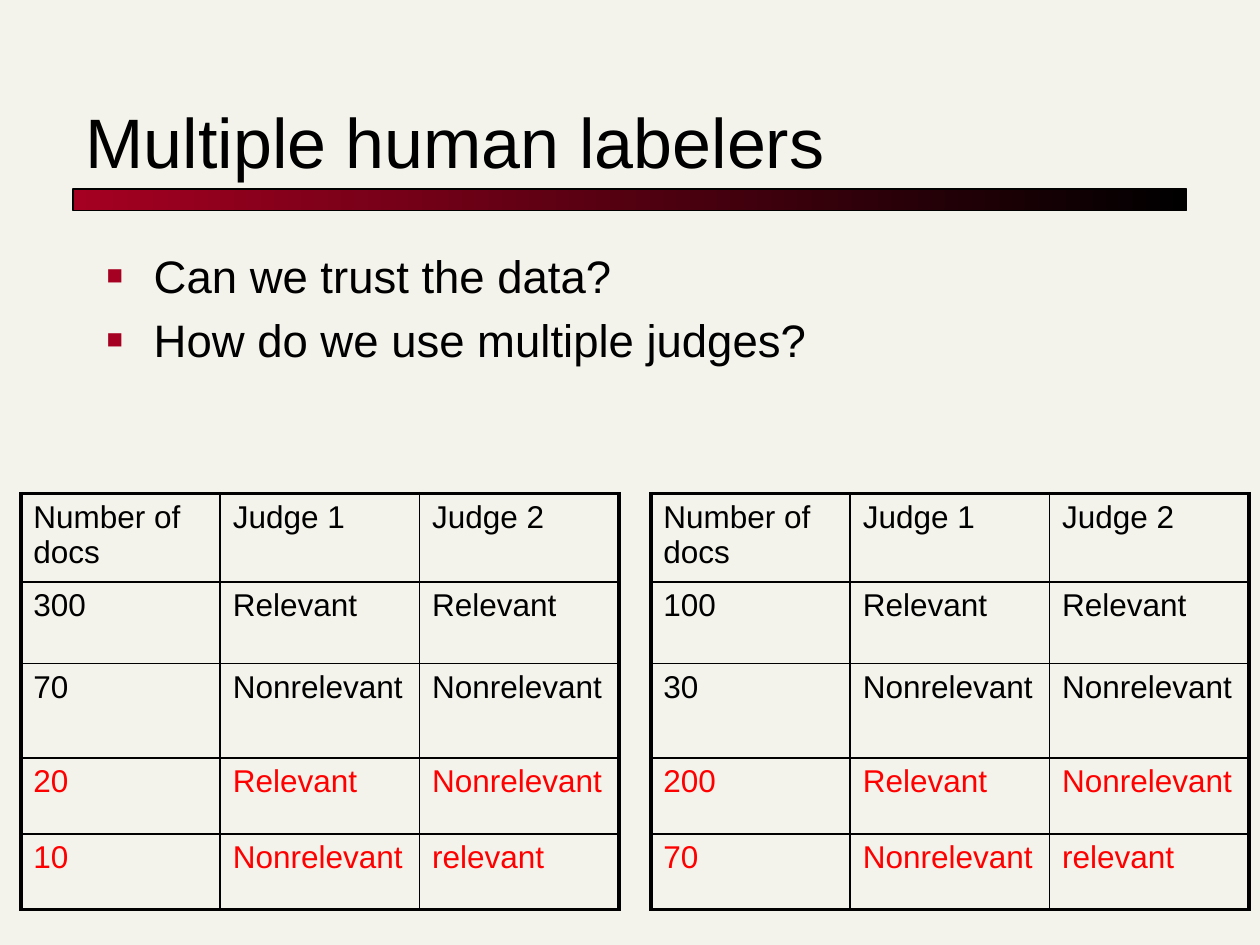
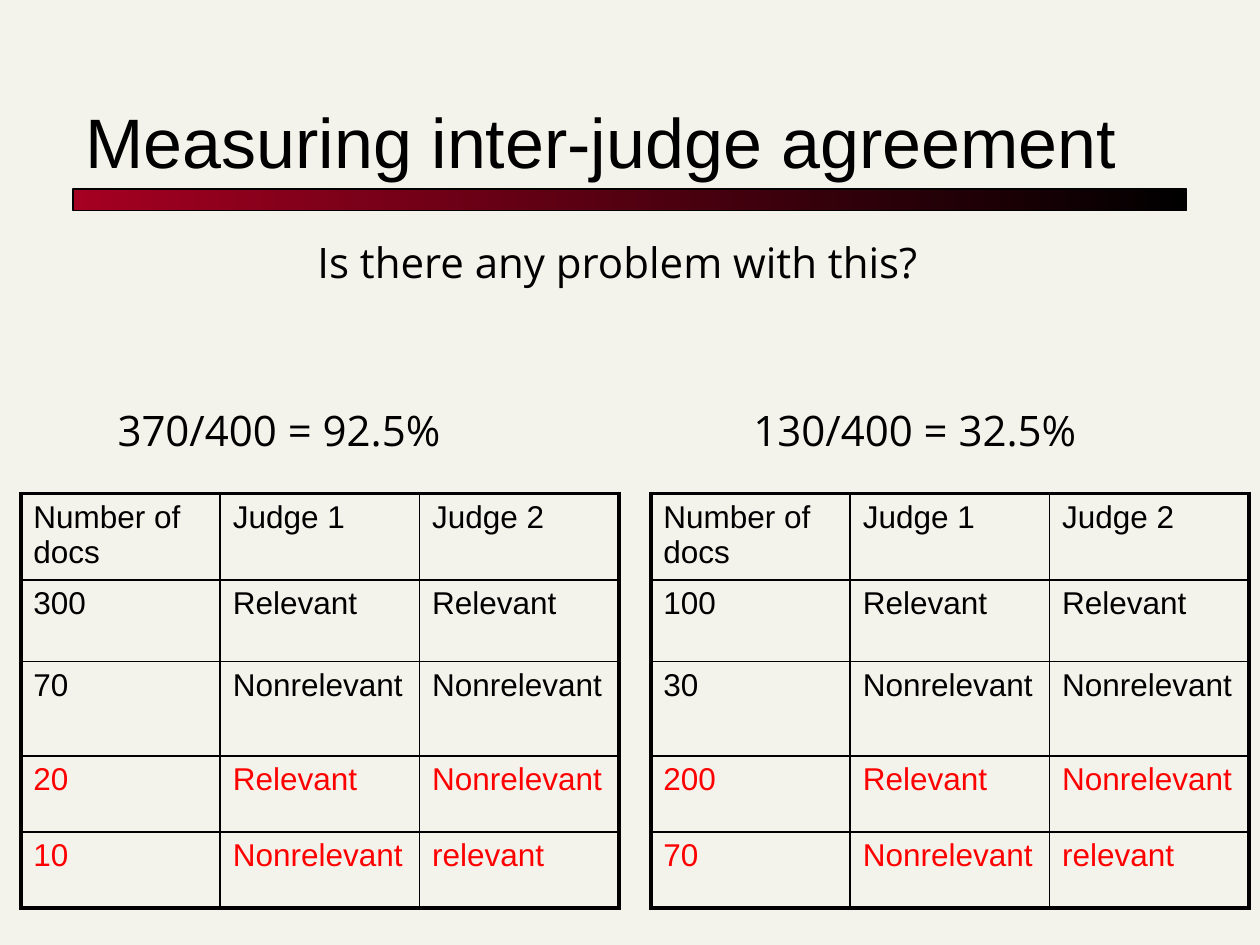
from dataclasses import dataclass

from lxml import etree
from pptx import Presentation
from pptx import util as u
from pptx.dml.color import RGBColor
from pptx.enum import shapes, text
from pptx.oxml.ns import qn


@dataclass(frozen=True)
class Theme:
    paper: str = "F4F3EB"
    ink: str = "000000"
    accent: str = "A50021"
    conflict: str = "FF0000"
    font: str = "Arial"
    note_font: str = "Open Sans"
    title_size: float = 40
    bullet_size: float = 26
    note_size: float = 24
    table_size: float = 18
    outer_line: float = 2.25
    inner_line: float = 1


def add_node(parent, tag, **attributes):
    return etree.SubElement(parent, qn(tag), attributes)


class SlideBuilder:
    def __init__(self, deck, theme):
        self.deck = deck
        self.theme = theme
        self.page = None

    def start_page(self, title):
        self.page = self.deck.slides.add_slide(self.deck.slide_layouts[5])
        fill = self.page.background.fill
        fill.solid()
        fill.fore_color.rgb = RGBColor.from_string(self.theme.paper)
        self.title_band()
        box = self.page.shapes.title
        box.left, box.top = u.Cm(1.47), u.Cm(1.07)
        box.width, box.height = u.Cm(22.43), u.Cm(2.74)
        frame = box.text_frame
        frame.text = title
        frame.word_wrap = True
        frame.auto_size = text.MSO_AUTO_SIZE.NONE
        frame.vertical_anchor = text.MSO_ANCHOR.BOTTOM
        frame.paragraphs[0].alignment = text.PP_ALIGN.LEFT
        self.style(frame.paragraphs[0], self.theme.title_size)

    def title_band(self):
        band = self.page.shapes.add_shape(
            shapes.MSO_SHAPE.RECTANGLE, u.Cm(1.47), u.Cm(3.81), u.Cm(22.45), u.Cm(0.43))
        band.shadow.inherit = False
        band.fill.gradient()
        band.fill.gradient_angle = 0
        for stop, color in zip(band.fill.gradient_stops, (self.theme.accent, self.theme.ink)):
            stop.color.rgb = RGBColor.from_string(color)
        band.line.color.rgb = RGBColor.from_string(self.theme.ink)
        band.line.width = u.Pt(0.75)

    def style(self, para, size, color=None, font=None):
        for span in para.runs:
            span.font.size = u.Pt(size)
            span.font.name = font or self.theme.font
            span.font.color.rgb = RGBColor.from_string(color or self.theme.ink)

    def space_before(self, para):
        properties = para._p.get_or_add_pPr()
        add_node(add_node(properties, "a:spcBef"), "a:spcPct", val="20000")
        return properties

    def bullets(self, lines):
        box = self.page.shapes.add_textbox(u.Cm(1.9), u.Cm(4.88), u.Cm(21.59), u.Cm(3.81))
        box.text_frame.word_wrap = True
        box.text_frame.text = "\n".join(lines)
        for para in box.text_frame.paragraphs:
            self.style(para, self.theme.bullet_size)
            properties = self.space_before(para)
            indent = u.Cm(0.95)
            properties.set("marL", str(indent))
            properties.set("indent", str(-indent))
            add_node(add_node(properties, "a:buClr"), "a:srgbClr", val=self.theme.accent)
            add_node(properties, "a:buSzPct", val="60000")
            add_node(properties, "a:buFont", typeface=self.theme.font)
            add_node(properties, "a:buChar", char="■")

    def note(self, words, left, top, width):
        box = self.page.shapes.add_textbox(u.Cm(left), u.Cm(top), u.Cm(width), u.Cm(1.27))
        frame = box.text_frame
        frame.word_wrap = False
        frame.auto_size = text.MSO_AUTO_SIZE.SHAPE_TO_FIT_TEXT
        frame.text = words
        self.style(frame.paragraphs[0], self.theme.note_size, font=self.theme.note_font)

    def borders(self, cell, outer_sides):
        properties = cell._tc.get_or_add_tcPr()
        for side in "LRTB":
            width = self.theme.outer_line if side in outer_sides else self.theme.inner_line
            line = add_node(properties, f"a:ln{side}", w=str(u.Pt(width)))
            add_node(add_node(line, "a:solidFill"), "a:srgbClr", val=self.theme.ink)
        cell.fill.background()

    def judge_table(self, counts, left):
        rows = [HEADINGS] + [(count, *pair) for count, pair in zip(counts, VERDICTS)]
        last_row, last_column = len(rows) - 1, len(HEADINGS) - 1
        frame = self.page.shapes.add_table(
            len(rows), len(HEADINGS), u.Cm(left), u.Cm(9.95),
            u.Cm(COLUMN_WIDTH * len(HEADINGS)), u.Cm(sum(ROW_HEIGHTS)))
        table = frame.table
        table.first_row = table.horz_banding = False
        for column in table.columns:
            column.width = u.Cm(COLUMN_WIDTH)
        for r, values in enumerate(rows):
            table.rows[r].height = u.Cm(ROW_HEIGHTS[r])
            judges_differ = r > 0 and values[1].lower() != values[2].lower()
            color = self.theme.conflict if judges_differ else self.theme.ink
            for c, value in enumerate(values):
                cell = table.cell(r, c)
                cell.text_frame.text = value
                para = cell.text_frame.paragraphs[0]
                self.style(para, self.theme.table_size, color)
                self.space_before(para)
                edges = {"L": c == 0, "R": c == last_column, "T": r == 0, "B": r == last_row}
                self.borders(cell, [side for side, outer in edges.items() if outer])

    def both_tables(self):
        for i, counts in enumerate(DOC_COUNTS):
            self.judge_table(counts, 0.42 + 12.7 * i)


HEADINGS = ("Number of docs", "Judge 1", "Judge 2")
VERDICTS = (
    ("Relevant", "Relevant"),
    ("Nonrelevant", "Nonrelevant"),
    ("Relevant", "Nonrelevant"),
    ("Nonrelevant", "relevant"),
)
DOC_COUNTS = (("300", "70", "20", "10"), ("100", "30", "200", "70"))
COLUMN_WIDTH = 4.02
ROW_HEIGHTS = (1.74, 1.65, 1.9, 1.53, 1.53)


def main():
    deck = Presentation()
    deck.slide_width, deck.slide_height = u.Cm(25.4), u.Cm(19.05)
    builder = SlideBuilder(deck, Theme())

    builder.start_page("Multiple human labelers")
    builder.bullets(["Can we trust the data?", "How do we use multiple judges?"])
    builder.both_tables()

    builder.start_page("Measuring inter-judge agreement")
    builder.both_tables()
    builder.note("370/400 = 92.5%", 2.12, 8.03, 7.72)
    builder.note("130/400 = 32.5%", 14.94, 8.03, 7.72)
    builder.note("Is there any problem with this?", 6.15, 4.65, 13.28)

    deck.save("out.pptx")


if __name__ == "__main__":
    main()
